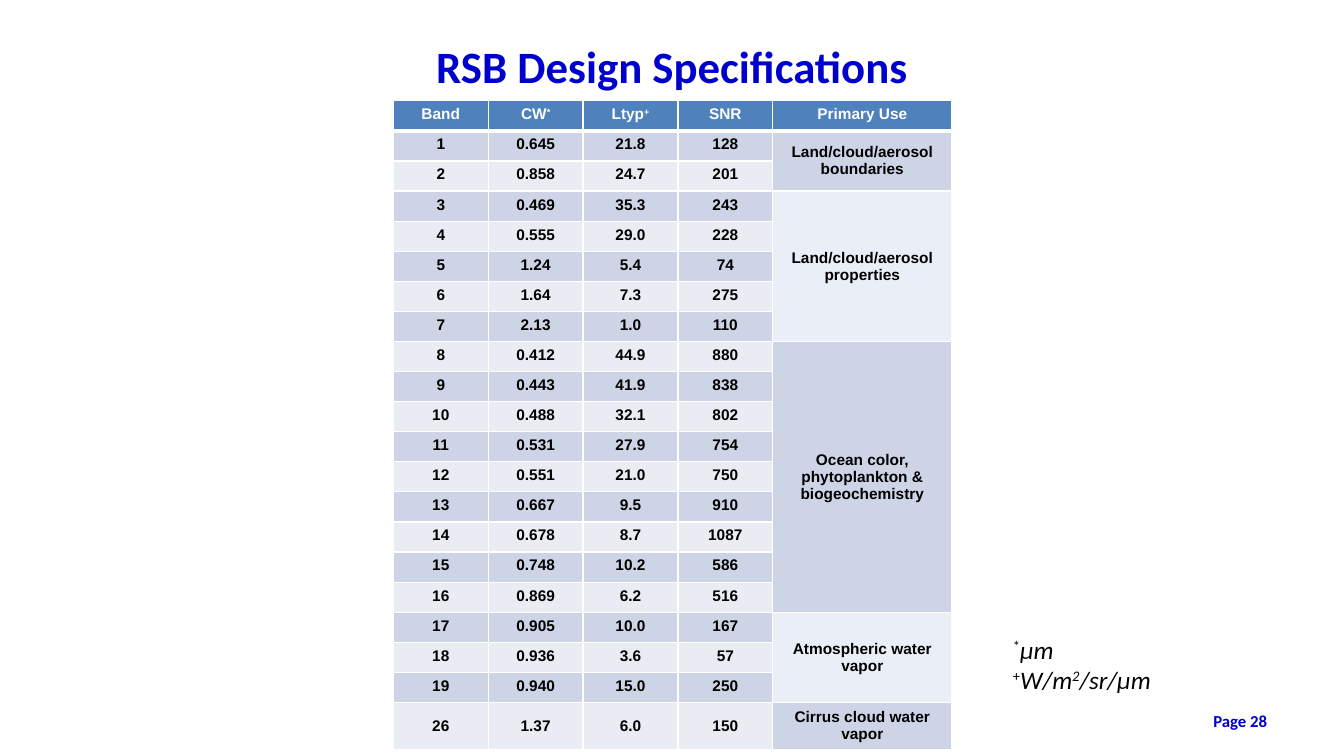
from lxml.etree import SubElement
from pptx import Presentation
from pptx.dml.color import RGBColor
from pptx.enum.text import MSO_ANCHOR, PP_ALIGN
from pptx.oxml.ns import qn
from pptx.util import Pt

# Content: a paragraph is a list of (text, format) runs
SUP = {"sup": True}
ITALIC = {"italic": True}
TITLE = "RSB Design Specifications"
PAGE = "Page 28"
HEADER = [
    [("Band", {})],
    [("CW", {}), ("*", SUP)],
    [("Ltyp", {}), ("+", SUP)],
    [("SNR", {})],
    [("Primary Use", {})],
]
USES = [
    ("Land/cloud/aerosol boundaries", [
        ("1", "0.645", "21.8", "128"),
        ("2", "0.858", "24.7", "201"),
    ]),
    ("Land/cloud/aerosol properties", [
        ("3", "0.469", "35.3", "243"),
        ("4", "0.555", "29.0", "228"),
        ("5", "1.24", "5.4", "74"),
        ("6", "1.64", "7.3", "275"),
        ("7", "2.13", "1.0", "110"),
    ]),
    ("Ocean color, phytoplankton & biogeochemistry", [
        ("8", "0.412", "44.9", "880"),
        ("9", "0.443", "41.9", "838"),
        ("10", "0.488", "32.1", "802"),
        ("11", "0.531", "27.9", "754"),
        ("12", "0.551", "21.0", "750"),
        ("13", "0.667", "9.5", "910"),
        ("14", "0.678", "8.7", "1087"),
        ("15", "0.748", "10.2", "586"),
        ("16", "0.869", "6.2", "516"),
    ]),
    ("Atmospheric water vapor", [
        ("17", "0.905", "10.0", "167"),
        ("18", "0.936", "3.6", "57"),
        ("19", "0.940", "15.0", "250"),
    ]),
    ("Cirrus cloud water vapor", [
        ("26", "1.37", "6.0", "150"),
    ]),
]
UNITS = [
    [("*", SUP), ("μm", ITALIC)],
    [("+", SUP), ("W/m", ITALIC), ("2", SUP | ITALIC), ("/sr/μm", ITALIC)],
]

BLUE, BLACK, WHITE = "0000CC", "000000", "FFFFFF"
HEADER_FILL = "4F81BD"
ROW_FILLS = ("CDD4E5", "E9ECF3")
USE_FILLS = ("CDD4E5", "EAEEF6")
COL_WIDTHS = [67.75] * 4 + [128]
ROW_HEIGHT = 21.5
THIN, THICK = 0.96, 3


def rgb(value):
    return RGBColor.from_string(value)


def write(tf, paragraphs, size=11, font="Arial", color=BLACK, bold=False,
          align=PP_ALIGN.CENTER, anchor=MSO_ANCHOR.TOP, wrap=True):
    if isinstance(paragraphs, str):
        paragraphs = [[(paragraphs, {})]]
    tf.word_wrap = wrap
    tf.vertical_anchor = anchor
    for i, runs in enumerate(paragraphs):
        p = tf.add_paragraph() if i else tf.paragraphs[0]
        p.alignment = align
        for text, fmt in runs:
            r = p.add_run()
            r.text = text
            r.font.size, r.font.name, r.font.bold = Pt(size), font, bold
            r.font.italic = fmt.get("italic", False)
            r.font.color.rgb = rgb(color)
            if fmt.get("sup"):
                r.font._element.set("baseline", "30000")


def style_cell(cell, fill, top=THIN, bottom=THIN):
    tcPr = cell._tc.get_or_add_tcPr()
    for side, width in (("L", THIN), ("R", THIN), ("T", top), ("B", bottom)):
        ln = SubElement(tcPr, qn("a:ln" + side), w=str(Pt(width)))
        SubElement(SubElement(ln, qn("a:solidFill")), qn("a:srgbClr"), val=WHITE)
    cell.fill.solid()
    cell.fill.fore_color.rgb = rgb(fill)


def add_box(s, x, y, w, h, paragraphs, **fmt):
    tf = s.shapes.add_textbox(Pt(x), Pt(y), Pt(w), Pt(h)).text_frame
    write(tf, paragraphs, **fmt)


def add_bands(s):
    bands = [band for _, group in USES for band in group]
    n_rows = len(bands) + 1
    table = s.shapes.add_table(n_rows, len(COL_WIDTHS), Pt(281), Pt(72),
                               Pt(sum(COL_WIDTHS)), Pt(ROW_HEIGHT * n_rows)).table
    for col, width in zip(table.columns, COL_WIDTHS):
        col.width = Pt(width)
    for row in table.rows:
        row.height = Pt(ROW_HEIGHT)

    # Header row
    for c, runs in enumerate(HEADER):
        cell = table.cell(0, c)
        style_cell(cell, HEADER_FILL, bottom=THICK)
        write(cell.text_frame, [runs], color=WHITE, bold=True)

    # Band values, with the last row centred vertically
    for r, band in enumerate(bands, 1):
        anchor = MSO_ANCHOR.MIDDLE if r == len(bands) else MSO_ANCHOR.TOP
        for c, value in enumerate(band):
            cell = table.cell(r, c)
            style_cell(cell, ROW_FILLS[(r - 1) % 2], top=THICK if r == 1 else THIN)
            cell.vertical_anchor = anchor
            write(cell.text_frame, value, bold=True)

    # Primary uses, each merged over its bands
    first, use_col = 1, len(COL_WIDTHS) - 1
    for i, (use, group) in enumerate(USES):
        last = first + len(group) - 1
        for r in range(first, last + 1):
            style_cell(table.cell(r, use_col), USE_FILLS[i % 2],
                       top=THICK if r == 1 else THIN)
        cell = table.cell(first, use_col)
        if last > first:
            cell.merge(table.cell(last, use_col))
        cell.vertical_anchor = MSO_ANCHOR.MIDDLE
        write(cell.text_frame, use, bold=True)
        first = last + 1


def main():
    prs = Presentation()
    prs.slide_width, prs.slide_height = Pt(960), Pt(540)
    s = prs.slides.add_slide(prs.slide_layouts[5])

    # Title
    title = s.shapes.title
    title.left, title.top, title.width, title.height = Pt(120), Pt(21.6), Pt(720), Pt(50.4)
    write(title.text_frame, TITLE, size=32, font="Calibri", color=BLUE, bold=True,
          anchor=MSO_ANCHOR.MIDDLE)

    # Page number, table and units
    add_box(s, 688.3, 500.4, 224, 28.8, PAGE, size=12, font="Calibri", color=BLUE,
            bold=True, align=PP_ALIGN.RIGHT, anchor=MSO_ANCHOR.MIDDLE)
    add_bands(s)
    add_box(s, 716.4, 449.3, 119.5, 51, UNITS, size=18, font="Calibri",
            align=PP_ALIGN.LEFT, wrap=False)

    prs.save("out.pptx")


if __name__ == "__main__":
    main()
